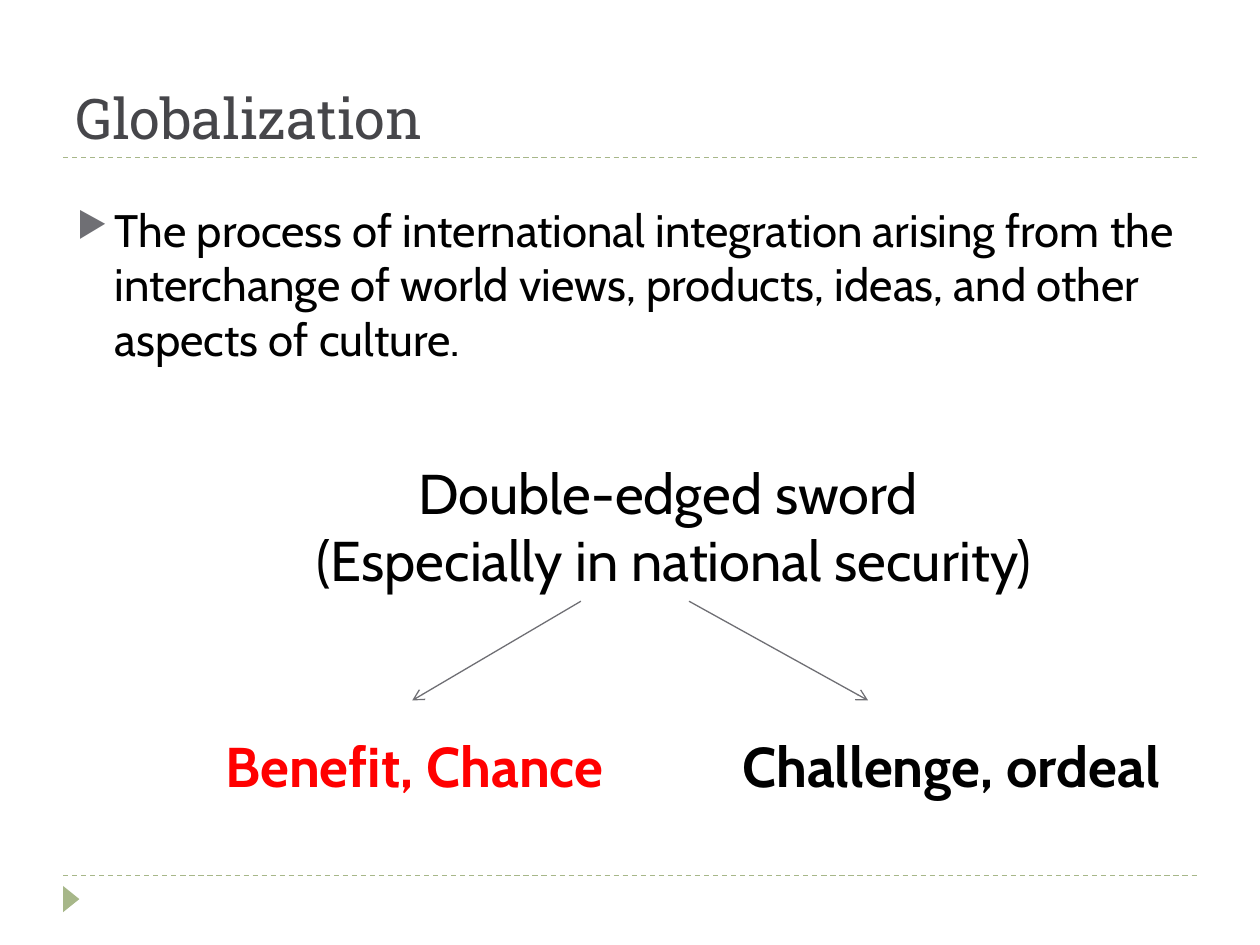
from lxml.etree import SubElement as Sub
from pptx import Presentation
from pptx.dml.color import RGBColor
from pptx.enum.dml import MSO_LINE as Dash
from pptx.enum.shapes import MSO_CONNECTOR as Conn, MSO_SHAPE as Shape
from pptx.enum.text import MSO_ANCHOR as Anchor, MSO_AUTO_SIZE as Auto, PP_ALIGN as Align
from pptx.oxml.ns import qn
from pptx.util import Cm, Pt

GREEN, GRAY, INK, BLACK, RED = "A7B789", "6F6F74", "46464A", "000000", "FF0000"


def paint(color, code):
    color.rgb = RGBColor.from_string(code)


class Page:
    head = "Roboto Slab"
    body = "Cabin"

    def __init__(self, slide):
        self.shapes = slide.shapes

    def text(self, box, lines, size=32, color=BLACK, font=None, bold=False,
             align=Align.LEFT, anchor=Anchor.TOP, fit=True):
        frame = self.shapes.add_textbox(*map(Cm, box)).text_frame
        frame.word_wrap = True
        frame.auto_size = Auto.SHAPE_TO_FIT_TEXT if fit else Auto.NONE
        frame.vertical_anchor = anchor
        frame.text = "\n".join(lines)
        for par in frame.paragraphs:
            par.alignment = align
            par.font.name = font or self.body
            par.font.size = Pt(size)
            par.font.bold = bold
            paint(par.font.color, color)
        return frame

    def bullet(self, box, line, size):
        par = self.text(box, [line], size, fit=False).paragraphs[0]
        par.space_before = Pt(6)
        props = par._p.get_or_add_pPr()
        props.set("marL", str(Cm(0.76)))
        props.set("indent", str(Cm(-0.76)))
        Sub(Sub(props, qn("a:buClr")), qn("a:srgbClr"), val=GRAY)
        Sub(props, qn("a:buSzPct"), val="76000")
        Sub(props, qn("a:buChar"), char="▶")

    def line(self, start, end, color):
        link = self.shapes.add_connector(Conn.STRAIGHT, *map(Cm, start + end))
        link.line.width = Pt(0.75)
        paint(link.line.color, color)
        Sub(link._element.spPr, qn("a:effectLst"))
        return link

    def rule(self, y):
        self.line((1.27, y), (24.13, y), GREEN).line.dash_style = Dash.DASH

    def arrow(self, start, end):
        link = self.line(start, end, GRAY)
        Sub(link.line._get_or_add_ln(), qn("a:tailEnd"), type="arrow")

    def marker(self, box):
        mark = self.shapes.add_shape(Shape.ISOSCELES_TRIANGLE, *map(Cm, box))
        mark.rotation = 90
        mark.shadow.inherit = False
        mark.fill.solid()
        paint(mark.fill.fore_color, GREEN)
        mark.line.fill.background()


def main():
    deck = Presentation()
    deck.slide_width, deck.slide_height = Cm(25.4), Cm(19.05)
    page = Page(deck.slides.add_slide(deck.slide_layouts[6]))

    for y in (17.65, 3.18):
        page.rule(y)
    page.marker((1.17, 17.96, 0.53, 0.33))
    page.text((1.27, 0.43, 22.86, 2.74), ["Globalization"], color=INK,
              font=page.head, anchor=Anchor.BOTTOM, fit=False)
    page.bullet((1.3, 3.94, 22.86, 4.67),
                "The process of international integration arising from the "
                "interchange of world views, products, ideas, and other "
                "aspects of culture.", 26)

    page.text((4.9, 9.12, 17.4, 3),
              ["Double-edged sword ", "(Especially in national security)"],
              align=Align.CENTER)
    top, tip = 12.12, 14.12
    for x, end in ((11.71, 8.31), (13.89, 17.5)):
        page.arrow((x, top), (end, tip))
    for x, wide, label, color in ((4.29, 8.2, "Benefit, Chance", RED),
                                  (14.71, 8.99, "Challenge, ordeal", BLACK)):
        page.text((x, 14.63, wide, 1.63), [label], color=color, bold=True)

    deck.save("out.pptx")


if __name__ == "__main__":
    main()
